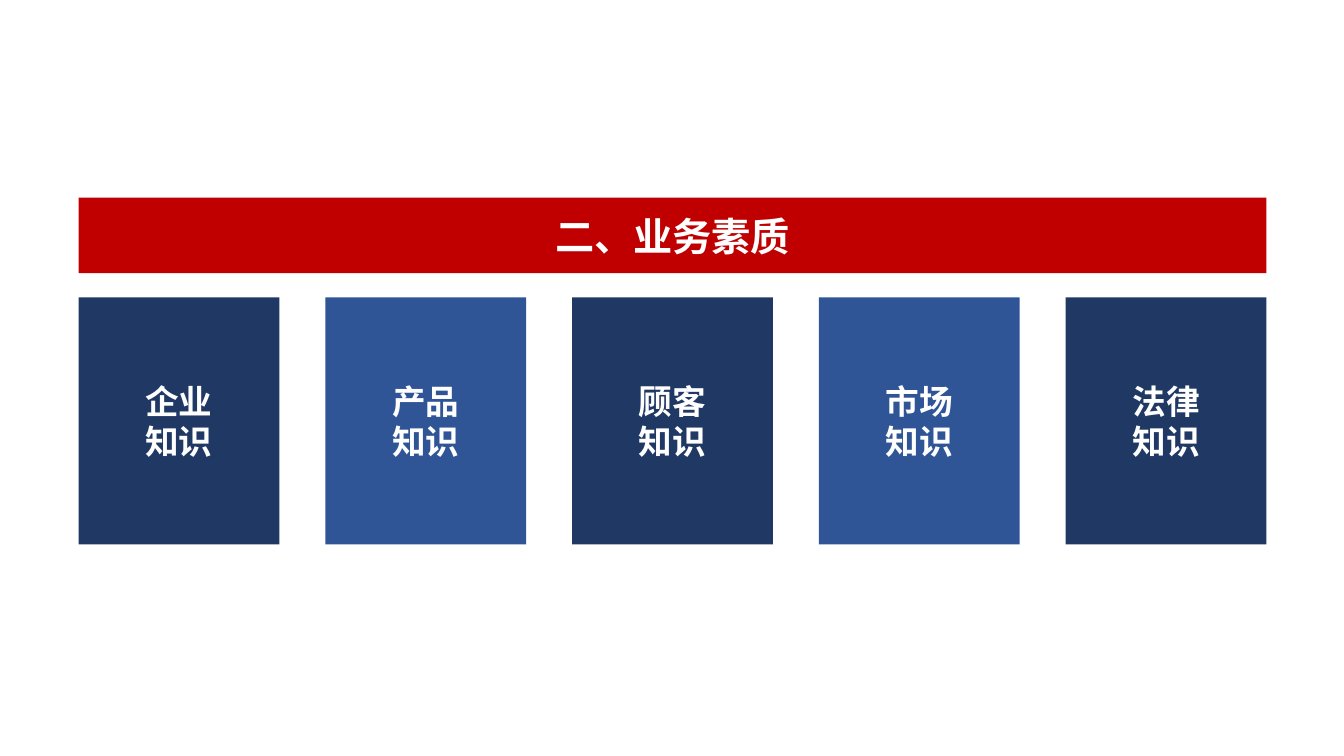
import pptx
import pptx.util
import pptx.dml.color
import pptx.enum.shapes
import pptx.enum.text
import pptx.oxml
import pptx.oxml.ns

HEADING = "二、业务素质"
CARDS = [
    ["企业", "知识"],
    ["产品", "知识"],
    ["顾客", "知识"],
    ["市场", "知识"],
    ["法律", "知识"],
]

FONT = "Noto Sans CJK SC"
WHITE = pptx.dml.color.RGBColor(0xFF, 0xFF, 0xFF)
RED = pptx.dml.color.RGBColor(0xC0, 0x00, 0x00)
NAVY = pptx.dml.color.RGBColor(0x20, 0x38, 0x64)
BLUE = pptx.dml.color.RGBColor(0x2F, 0x55, 0x97)

# Inches
PAGE_WIDTH, PAGE_HEIGHT = 13.33, 7.5
MARGIN = 0.78
BAND_WIDTH = 11.78
BANNER_TOP, BANNER_HEIGHT = 1.96, 0.75
CARD_TOP, CARD_WIDTH, CARD_HEIGHT = 2.95, 1.99, 2.45
CARD_STEP = (BAND_WIDTH - CARD_WIDTH) / (len(CARDS) - 1)


def place(shape, left, top, width, height):
    for name, value in dict(left=left, top=top, width=width, height=height).items():
        setattr(shape, name, pptx.util.Inches(value))


def style_block(shape, fill, lines, size):
    """Give a block its flat fill and centred bold white lines."""
    shape.fill.solid()
    shape.fill.fore_color.rgb = fill
    shape.line.fill.background()
    frame = shape.text_frame
    frame.auto_size = pptx.enum.text.MSO_AUTO_SIZE.NONE
    frame.word_wrap = True
    frame.vertical_anchor = pptx.enum.text.MSO_ANCHOR.MIDDLE
    frame.text = "\n".join(lines)
    font_format = {"name": FONT, "size": pptx.util.Pt(size), "bold": True}
    for para in frame.paragraphs:
        para.alignment = pptx.enum.text.PP_ALIGN.CENTER
        for span in para.runs:
            for name, value in font_format.items():
                setattr(span.font, name, value)
            span.font.color.rgb = WHITE
            east_asian = pptx.oxml.parse_xml(
                f'<a:ea {pptx.oxml.ns.nsdecls("a")} typeface="{FONT}"/>')
            span._r.get_or_add_rPr().append(east_asian)


def main():
    deck = pptx.Presentation()
    deck.slide_width = pptx.util.Inches(PAGE_WIDTH)
    deck.slide_height = pptx.util.Inches(PAGE_HEIGHT)
    page = deck.slides.add_slide(deck.slide_layouts.get_by_name("Title Only"))

    banner = page.shapes.title
    place(banner, MARGIN, BANNER_TOP, BAND_WIDTH, BANNER_HEIGHT)
    style_block(banner, RED, [HEADING], 28)

    for column, lines in enumerate(CARDS):
        card = page.shapes.add_shape(pptx.enum.shapes.MSO_SHAPE.RECTANGLE, 0, 0, 0, 0)
        card.shadow.inherit = False
        place(card, MARGIN + column * CARD_STEP, CARD_TOP, CARD_WIDTH, CARD_HEIGHT)
        style_block(card, BLUE if column % 2 else NAVY, lines, 24)

    deck.save("out.pptx")


if __name__ == "__main__":
    main()
